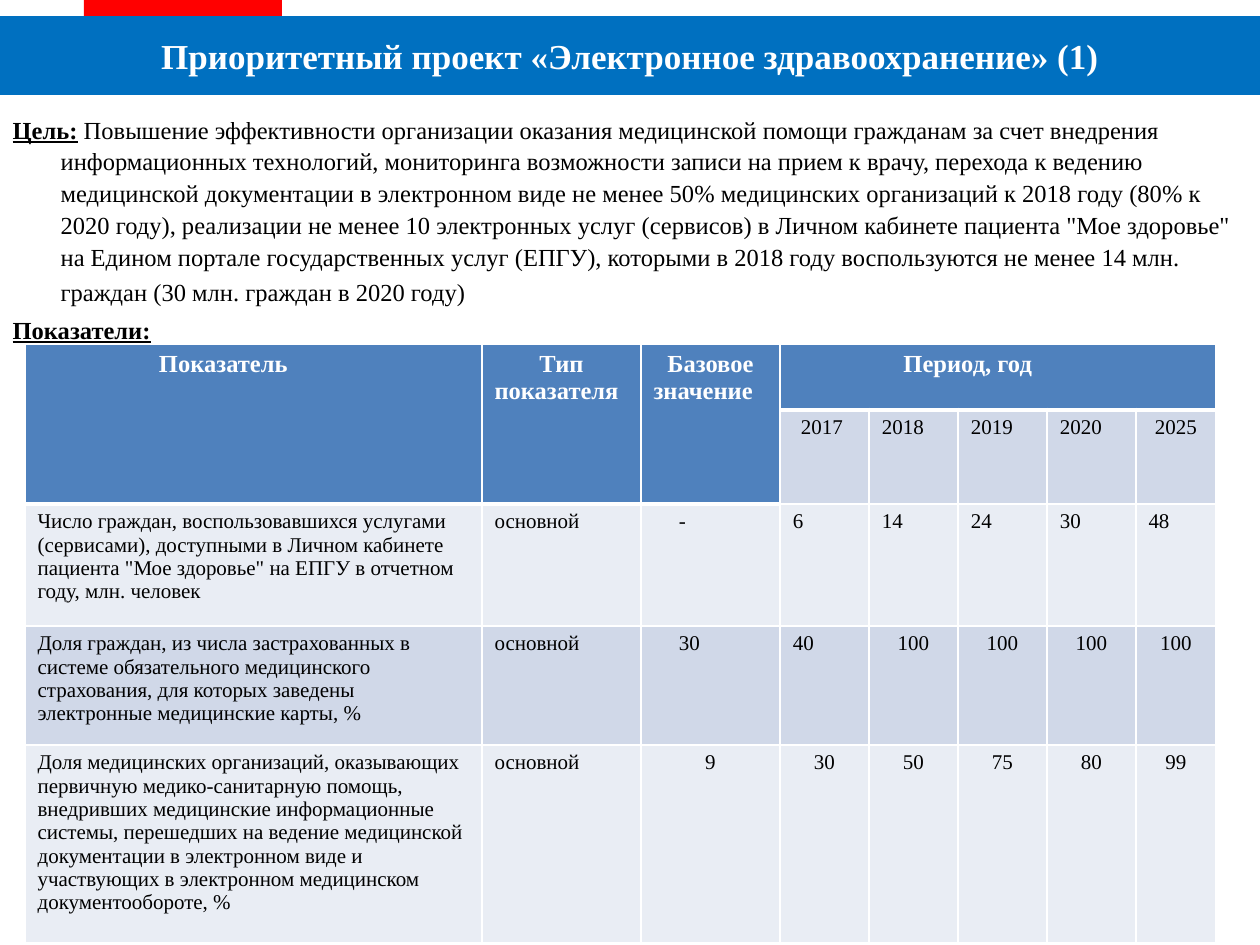
from pptx import Presentation
from pptx.dml.color import RGBColor
from pptx.enum.shapes import MSO_SHAPE
from pptx.enum.text import MSO_ANCHOR, MSO_AUTO_SIZE, PP_ALIGN
from pptx.oxml.ns import qn
from pptx.util import Pt
from lxml import etree

RECT = MSO_SHAPE.RECTANGLE
TOP, MIDDLE = MSO_ANCHOR.TOP, MSO_ANCHOR.MIDDLE
NO_AUTOFIT = MSO_AUTO_SIZE.NONE
LEFT, CENTER = PP_ALIGN.LEFT, PP_ALIGN.CENTER

WHITE, BLACK = "FFFFFF", "000000"
BLUE, RED = "0070C0", "FF0000"
HEADER, BAND_DARK, BAND_LIGHT = "4F81BD", "D0D8E8", "E9EDF4"

TITLE = "Приоритетный проект «Электронное здравоохранение» (1)"
GOAL = (
    "Повышение эффективности организации оказания медицинской помощи гражданам "
    "за счет внедрения информационных технологий, мониторинга возможности записи "
    "на прием к врачу, перехода к ведению медицинской документации в электронном "
    "виде не менее 50% медицинских организаций к 2018 году (80% к 2020 году), "
    "реализации не менее 10 электронных услуг (сервисов) в Личном кабинете пациента "
    '"Мое здоровье" на Едином портале государственных услуг (ЕПГУ), которыми в 2018 '
    "году воспользуются не менее 14 млн. граждан (30 млн. граждан в 2020 году) "
)
ROWS = [
    ["Показатель \t", "Тип показателя \t", "Базовое значение \t", "Период, год \t",
     "", "", "", ""],
    ["", "", "", "2017 ", "2018 \t", "2019 \t", "2020 \t", "2025"],
    ["Число граждан, воспользовавшихся услугами (сервисами), доступными в Личном "
     'кабинете пациента "Мое здоровье" на ЕПГУ в отчетном году, млн. человек',
     "основной \t", "- \t", "6 \t", "14 \t", "24 \t", "30 \t", "48 \t"],
    ["Доля граждан, из числа застрахованных в системе обязательного медицинского "
     "страхования, для которых заведены электронные медицинские карты, % \t",
     "основной \t", "30 \t", "40 \t", "100", "100", "100", "100"],
    ["Доля медицинских организаций, оказывающих первичную медико-санитарную помощь, "
     "внедривших медицинские информационные системы, перешедших на ведение "
     "медицинской документации в электронном виде и участвующих в электронном "
     "медицинском документообороте, % \t",
     "основной", "9", "30", "50", "75", "80", "99"],
]
COL_WIDTHS = [457, 159, 139, 89, 89, 89, 89, 80]
ROW_HEIGHTS = [66, 94, 122, 119, 198]
PERIOD_COL = 3


def px(n):
    return round(n * 914400 / 126)


def rgb(value):
    return RGBColor.from_string(value)


def add_text(p, text, size=14, color=BLACK, bold=False, underline=False,
             font="Times New Roman"):
    r = p.add_run()
    r.text = text
    r.font.name = font
    r.font.size = Pt(size)
    r.font.bold = bold
    r.font.underline = underline
    r.font.color.rgb = rgb(color)


def set_border(cell, side, width):
    tc_pr = cell._tc.get_or_add_tcPr()
    ln = etree.SubElement(tc_pr, qn(f"a:ln{side}"), w=str(Pt(width)))
    fill = etree.SubElement(ln, qn("a:solidFill"))
    etree.SubElement(fill, qn("a:srgbClr"), val=WHITE)


def is_header(row, col):
    return row == 0 or (row == 1 and col < PERIOD_COL)


class SlideBuilder:
    def __init__(self, slide):
        self.s = slide

    def place(self, sp, x, y, w, h):
        sp.left, sp.top, sp.width, sp.height = map(px, (x, y, w, h))

    def title(self, text, *box):
        sp = self.s.shapes.title
        self.place(sp, *box)
        sp.fill.solid()
        sp.fill.fore_color.rgb = rgb(BLUE)
        tf = sp.text_frame
        tf.auto_size = NO_AUTOFIT
        tf.vertical_anchor = MIDDLE
        p = tf.paragraphs[0]
        p.alignment = CENTER
        add_text(p, text, size=20, color=WHITE, bold=True)

    def rect(self, color, x, y, w, h):
        sp = self.s.shapes.add_shape(RECT, px(x), px(y), px(w), px(h))
        sp.shadow.inherit = False
        sp.fill.solid()
        sp.fill.fore_color.rgb = rgb(color)
        sp.line.fill.background()

    def body(self, paragraphs, *box):
        sp = self.s.placeholders[1]
        self.place(sp, *box)
        tf = sp.text_frame
        tf.auto_size = NO_AUTOFIT
        tf.vertical_anchor = TOP
        tf.word_wrap = True
        for i, runs in enumerate(paragraphs):
            p = tf.add_paragraph() if i else tf.paragraphs[0]
            p.alignment = LEFT
            p.line_spacing = 1.08
            p.space_before = Pt(3)
            p_pr = p._p.get_or_add_pPr()
            p_pr.set("marL", str(px(48)))
            p_pr.set("indent", str(-px(48)))
            etree.SubElement(p_pr, qn("a:buNone"))
            for text, style in runs:
                add_text(p, text, **style)

    def table(self, rows, x, y):
        frame = self.s.shapes.add_table(
            len(rows), len(COL_WIDTHS), px(x), px(y),
            px(sum(COL_WIDTHS)), px(sum(ROW_HEIGHTS)))
        table = frame.table
        table.first_row = table.horz_banding = False
        for column, width in zip(table.columns, COL_WIDTHS):
            column.width = px(width)
        for row, height in zip(table.rows, ROW_HEIGHTS):
            row.height = px(height)
        for i, texts in enumerate(rows):
            for j, text in enumerate(texts):
                self.cell(table.cell(i, j), text, i, j)
        for j in range(PERIOD_COL):
            table.cell(0, j).merge(table.cell(1, j))
        table.cell(0, PERIOD_COL).merge(table.cell(0, len(COL_WIDTHS) - 1))

    def cell(self, cell, text, i, j):
        header = is_header(i, j)
        below_header = i > 0 and not header and is_header(i - 1, j)
        widths = {"L": 1, "R": 1, "T": 3 if below_header else 1, "B": 3 if header else 1}
        for side, width in widths.items():
            set_border(cell, side, width)
        cell.fill.solid()
        band = BAND_DARK if i % 2 else BAND_LIGHT
        cell.fill.fore_color.rgb = rgb(HEADER if header else band)
        if text:
            p = cell.text_frame.paragraphs[0]
            p.alignment = CENTER if header or j > 1 else LEFT
            add_text(p, text, size=14 if header else 12,
                     color=WHITE if header else BLACK, bold=header)


def main():
    prs = Presentation()
    prs.slide_width, prs.slide_height = px(1260), px(945)
    builder = SlideBuilder(prs.slides.add_slide(prs.slide_layouts[1]))
    label = {"bold": True, "underline": True}
    builder.title(TITLE, 0, 16, 1260, 79)
    builder.rect(RED, 84, 0, 198, 16)
    builder.body([
        [("Цель:", label), (" ", {"bold": True}), (GOAL, {}),
         ("\t", {"size": 16, "font": "Calibri"})],
        [("Показатели:", label)],
    ], 0, 106, 1245, 624)
    builder.table(ROWS, 25, 344)
    prs.save("out.pptx")


if __name__ == "__main__":
    main()
